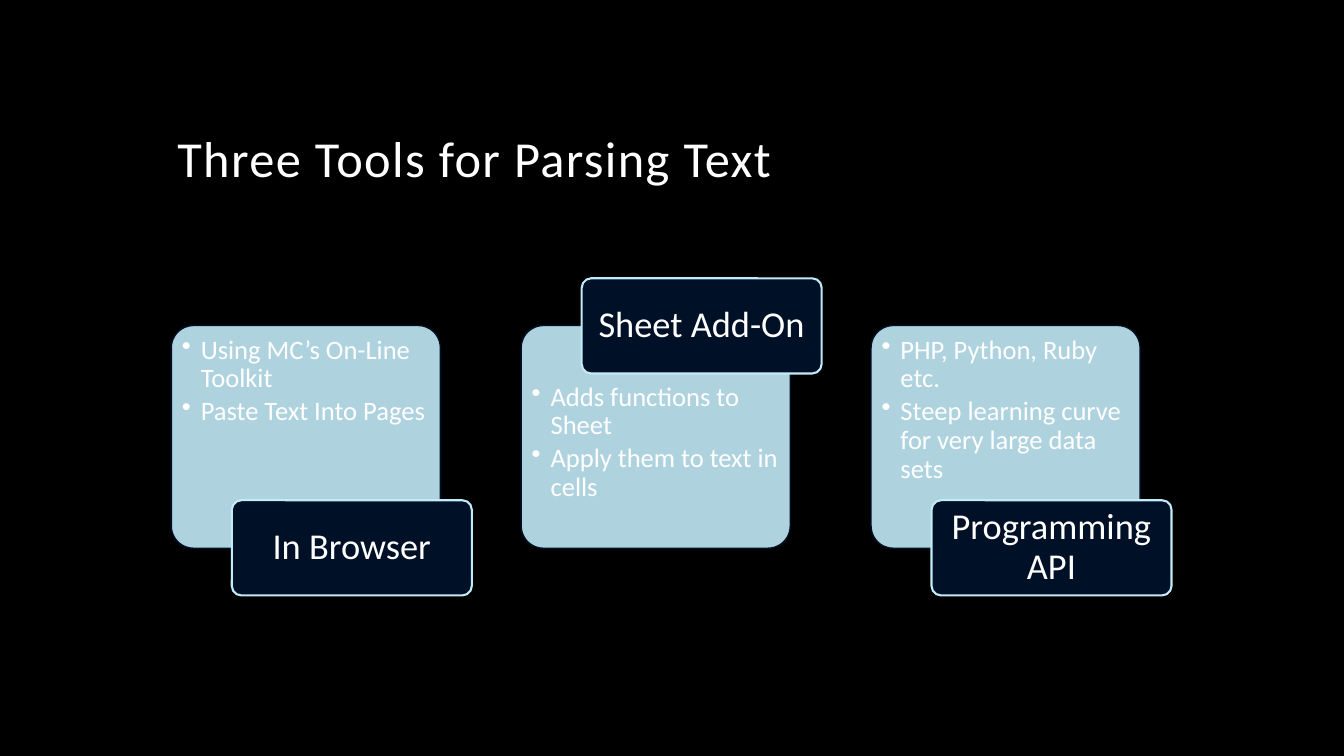
from lxml import etree
from pptx import Presentation
from pptx.dml.color import RGBColor
from pptx.enum.shapes import MSO_SHAPE
from pptx.enum.text import MSO_ANCHOR, MSO_AUTO_SIZE, PP_ALIGN
from pptx.oxml.ns import qn
from pptx.util import Pt

ROUNDED = MSO_SHAPE.ROUNDED_RECTANGLE
TOP, MIDDLE, BOTTOM = MSO_ANCHOR.TOP, MSO_ANCHOR.MIDDLE, MSO_ANCHOR.BOTTOM
LEFT, CENTER = PP_ALIGN.LEFT, PP_ALIGN.CENTER
NO_FIT = MSO_AUTO_SIZE.NONE

BLACK, WHITE, NAVY, ICE = "000000", "FFFFFF", "001027", "C1EBF7"
CARD_LEFT, CARD_TOP, CARD_PITCH = 122.4, 232.5, 249.9
CARD_WIDTH, CARD_HEIGHT = 192.2, 159.1
TAG_WIDTH, TAG_HEIGHT, TAG_SHIFT = 171.4, 68, 43.2
TAG_OVERHANG = 33.7

TOOLS = [
    ("In Browser", False, ["Using MC’s On-Line Toolkit", "Paste Text Into Pages"]),
    ("Sheet Add-On", True, ["Adds functions to Sheet", "Apply them to text in cells"]),
    ("Programming API", False,
     ["PHP, Python, Ruby etc.", "Steep learning curve for very large data sets"]),
]


def color(value):
    return RGBColor.from_string(value)


class SlideBuilder:
    """Draws styled elements on the current slide."""

    font = "Calibri"

    def __init__(self, deck):
        self.slide = deck.slides.add_slide(deck.slide_layouts[5])
        fill = self.slide.background.fill
        fill.solid()
        fill.fore_color.rgb = color(BLACK)

    def frame(self, box, anchor, margins):
        frame = box.text_frame
        frame.word_wrap = True
        frame.auto_size = NO_FIT
        frame.vertical_anchor = anchor
        (frame.margin_left, frame.margin_top,
         frame.margin_right, frame.margin_bottom) = map(Pt, margins)
        return frame

    def add_text(self, para, text, size, align):
        para.alignment = align
        para.line_spacing = 0.9
        span = para.add_run()
        span.text = text
        span.font.name = self.font
        span.font.size = Pt(size)
        span.font.color.rgb = color(WHITE)
        return span

    def title(self, text, left, top, width, height):
        box = self.slide.shapes.title
        box.left, box.top, box.width, box.height = map(Pt, (left, top, width, height))
        frame = self.frame(box, BOTTOM, (7.2, 3.6, 7.2, 3.6))
        span = self.add_text(frame.paragraphs[0], text, 36, LEFT)
        span.font._element.set("spc", "100")

    def panel(self, left, top, width, height, fill, line, weight):
        box = self.slide.shapes.add_shape(ROUNDED, *map(Pt, (left, top, width, height)))
        box.adjustments[0] = 0.1
        box.shadow.inherit = False
        box.fill.solid()
        box.fill.fore_color.rgb = color(fill)
        box.line.color.rgb = color(line)
        box.line.width = Pt(weight)
        return box

    def card(self, left, top, bullets, tag_above):
        box = self.panel(left, top, CARD_WIDTH, CARD_HEIGHT, ICE, NAVY, 1)
        tint = box.fill._xPr.find(qn("a:solidFill"))[0]
        etree.SubElement(tint, qn("a:alpha"), val="90000")
        above, below = (TAG_OVERHANG, 0) if tag_above else (0, TAG_OVERHANG)
        frame = self.frame(box, TOP, (2.9, 2.9 + above, 2.9, 2.9 + below))
        for index, text in enumerate(bullets):
            para = frame.add_paragraph() if index else frame.paragraphs[0]
            props = para._p.get_or_add_pPr()
            props.set("marL", str(Pt(13.5)))
            props.set("indent", str(-Pt(13.5)))
            etree.SubElement(props, qn("a:buChar"), char="•")
            para.level = 1
            para.space_after = Pt(3)
            self.add_text(para, text, 19, LEFT)

    def tag(self, left, top, text):
        box = self.panel(left, top, TAG_WIDTH, TAG_HEIGHT, NAVY, ICE, 1.5)
        frame = self.frame(box, MIDDLE, (3.6, 2.6, 3.6, 2.6))
        self.add_text(frame.paragraphs[0], text, 26, CENTER)


def main():
    deck = Presentation()
    deck.slide_width, deck.slide_height = Pt(960), Pt(540)
    page = SlideBuilder(deck)
    page.title("Three Tools for Parsing Text", 119.5, 30.2, 720, 108)
    for index, (name, tag_above, bullets) in enumerate(TOOLS):
        left = CARD_LEFT + index * CARD_PITCH
        edge = CARD_TOP if tag_above else CARD_TOP + CARD_HEIGHT
        overlap = TAG_OVERHANG if tag_above else TAG_HEIGHT - TAG_OVERHANG
        page.card(left, CARD_TOP, bullets, tag_above)
        page.tag(left + TAG_SHIFT, edge - overlap, name)
    deck.save("out.pptx")


if __name__ == "__main__":
    main()
